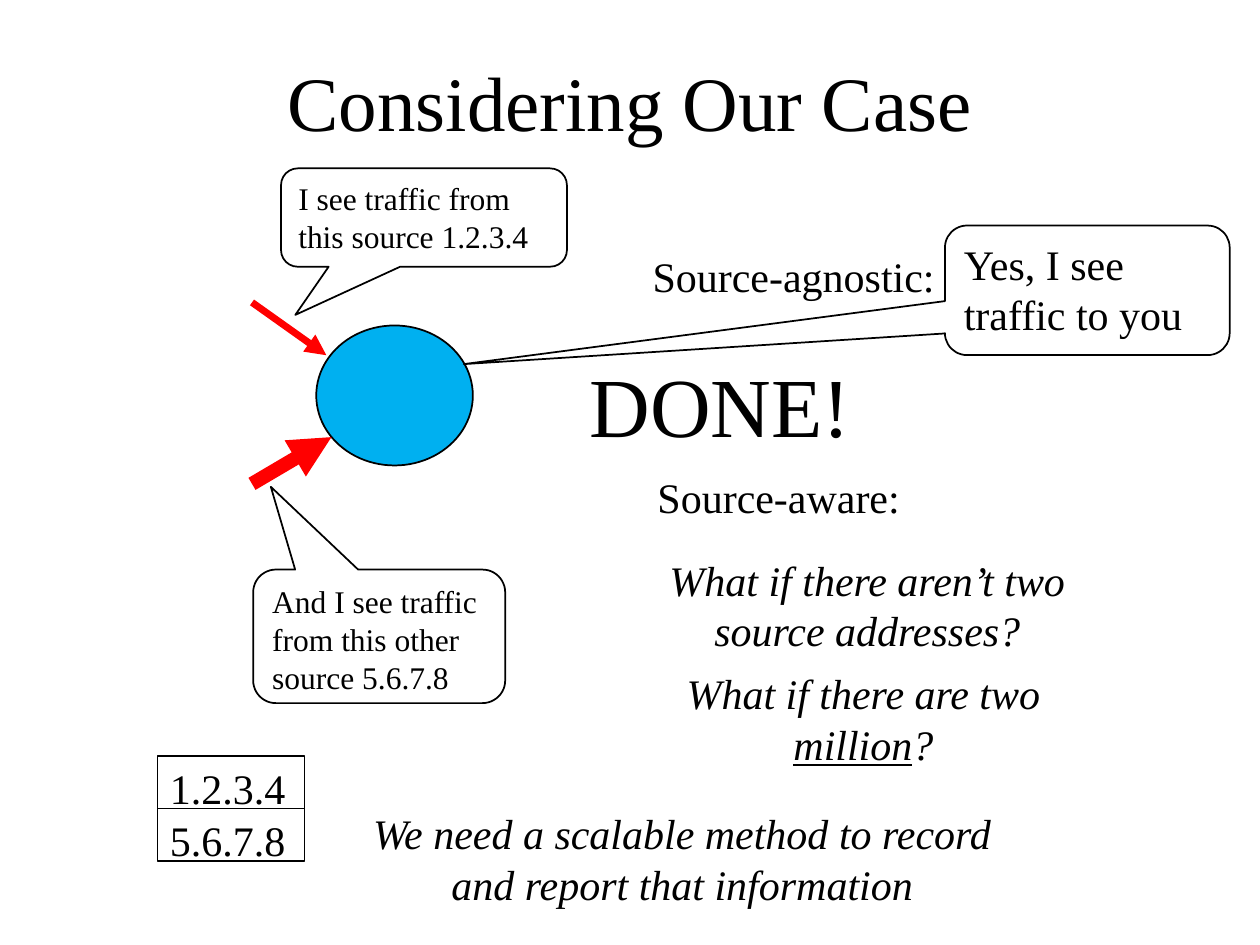
from dataclasses import dataclass

from lxml import etree
from pptx import Presentation
from pptx.dml.color import RGBColor
from pptx.enum.shapes import MSO_CONNECTOR, MSO_SHAPE
from pptx.enum.text import MSO_ANCHOR, MSO_AUTO_SIZE, PP_ALIGN
from pptx.oxml.ns import qn
from pptx.util import Pt

STRAIGHT = MSO_CONNECTOR.STRAIGHT
OVAL, RECTANGLE = MSO_SHAPE.OVAL, MSO_SHAPE.RECTANGLE
CALLOUT = MSO_SHAPE.ROUNDED_RECTANGULAR_CALLOUT
TOP, MIDDLE = MSO_ANCHOR.TOP, MSO_ANCHOR.MIDDLE
GROW, FIXED = MSO_AUTO_SIZE.SHAPE_TO_FIT_TEXT, MSO_AUTO_SIZE.NONE
LEFT, CENTER = PP_ALIGN.LEFT, PP_ALIGN.CENTER


@dataclass(frozen=True)
class Theme:
    font: str = "Times New Roman"
    ink: RGBColor = RGBColor(0, 0, 0)
    router: RGBColor = RGBColor(0x00, 0xB0, 0xF0)
    traffic: RGBColor = RGBColor(0xFF, 0, 0)
    title: int = 44
    shout: int = 48
    body: int = 24
    small: int = 18
    outline: int = 1


class Board:
    def __init__(self, slide, theme):
        self.slide = slide
        self.theme = theme

    def fill_text(self, frame, runs, size, align=LEFT, anchor=TOP, wrap=True,
                  fit=FIXED, **font_format):
        frame_format = {"word_wrap": wrap, "auto_size": fit, "vertical_anchor": anchor}
        for name, value in frame_format.items():
            setattr(frame, name, value)
        paragraph = frame.paragraphs[0]
        paragraph.alignment = align
        base = {"name": self.theme.font, "size": Pt(size), **font_format}
        for words, extra in runs:
            run = paragraph.add_run()
            run.text = words
            run.font.color.rgb = self.theme.ink
            for name, value in {**base, **extra}.items():
                setattr(run.font, name, value)

    def text(self, box, *runs, size=None, **text_format):
        area = self.slide.shapes.add_textbox(*map(Pt, box))
        runs = [run if isinstance(run, tuple) else (run, {}) for run in runs]
        self.fill_text(area.text_frame, runs, size or self.theme.body, **text_format)

    def label(self, box, words, size=None):
        self.text(box, words, size=size, wrap=False, fit=GROW)

    def question(self, box, *runs):
        self.text(box, *runs, align=CENTER, fit=GROW, italic=True)

    def shape(self, kind, box, words="", size=None, fill=None, tail=()):
        outline = self.slide.shapes.add_shape(kind, *map(Pt, box))
        outline.shadow.inherit = False
        if fill is None:
            outline.fill.background()
        else:
            outline.fill.solid()
            outline.fill.fore_color.rgb = fill
        outline.line.color.rgb = self.theme.ink
        outline.line.width = Pt(self.theme.outline)
        for index, value in enumerate(tail):
            outline.adjustments[index] = value
        if words:
            self.fill_text(outline.text_frame, [(words, {})], size or self.theme.body)

    def arrow(self, start, end, width):
        arrow = self.slide.shapes.add_connector(STRAIGHT, *map(Pt, start + end))
        arrow.line.color.rgb = self.theme.traffic
        arrow.line.width = Pt(width)
        properties = arrow._element.spPr
        etree.SubElement(properties.find(qn("a:ln")), qn("a:tailEnd"), type="triangle")
        etree.SubElement(properties, qn("a:effectLst"))


def main():
    deck = Presentation()
    deck.slide_width, deck.slide_height = Pt(720), Pt(540)
    theme = Theme()
    board = Board(deck.slides.add_slide(deck.slide_layouts[6]), theme)

    board.text((54, 12.24, 612, 90), "Considering Our Case",
               size=theme.title, align=CENTER, anchor=MIDDLE)

    board.shape(OVAL, (180.72, 186, 89.5, 80), fill=theme.router)
    board.arrow((144, 172.8), (186.5, 203), 4)
    board.arrow((144, 276.5), (189.4, 249.8), 8)

    board.label((365.8, 139.7, 177, 36), "Source-agnostic:")
    board.shape(CALLOUT, (540, 128.9, 162.7, 74), "Yes, I see traffic to you",
                tail=(-2.19, 0.57, 0.17))
    board.label((329.8, 198.7, 165.6, 65.5), "DONE!", theme.shout)
    board.label((368.6, 265.7, 154, 36), "Source-aware:")

    board.shape(CALLOUT, (160.6, 96.2, 163.4, 56.2),
                "I see traffic from this source 1.2.3.4",
                theme.small, tail=(-0.45, 0.99, 0.17))
    board.shape(CALLOUT, (144.7, 325.5, 144, 76.3),
                "And I see traffic from this other source 5.6.7.8",
                theme.small, tail=(-0.43, -1.12, 0.17))

    board.question((345.6, 313.2, 300, 65.5), "What if there aren’t two source addresses?")
    board.question((343.4, 378, 300, 65.5), "What if there are two ",
                   ("million", {"underline": True}), "?")

    row_height = 30
    for row, address in enumerate(("1.2.3.4", "5.6.7.8")):
        board.shape(RECTANGLE, (90, 432 + row * row_height, 84, row_height), address)

    board.question((203.8, 458, 372, 65.5),
                   "We need a scalable method to record and report that information")

    deck.save("out.pptx")


if __name__ == "__main__":
    main()
